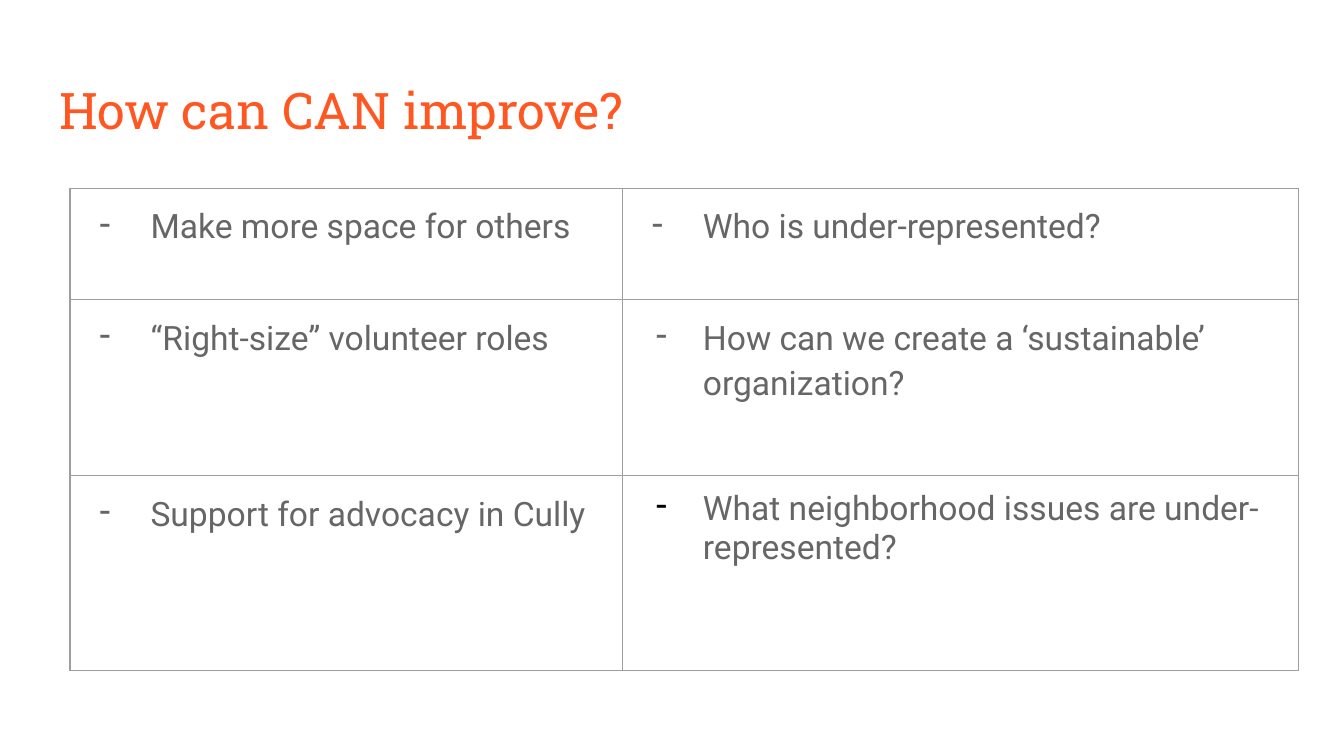
import pptx
import pptx.util
import pptx.dml.color
import pptx.enum.text
import pptx.oxml
import pptx.oxml.ns
from pptx.util import Inches

GRAY = "666666"
NS = pptx.oxml.ns.nsdecls("a")


def rgb(value):
    return pptx.dml.color.RGBColor.from_string(value)


def style(r, font, size, color):
    r.font.name = font
    r.font.size = pptx.util.Pt(size)
    r.font.color.rgb = rgb(color)


prs = pptx.Presentation()
prs.slide_width = Inches(10)
prs.slide_height = Inches(10) * 9 // 16
s = prs.slides.add_slide(prs.slide_layouts[5])

title = s.shapes.title
title.left, title.top = Inches(0.34), Inches(0.49)
title.width, title.height = Inches(9.32), Inches(0.63)
tf = title.text_frame
tf.text = "How can CAN improve?"
tf.margin_left = tf.margin_right = tf.margin_top = tf.margin_bottom = Inches(0.1)
tf.vertical_anchor = pptx.enum.text.MSO_ANCHOR.TOP
tf.auto_size = pptx.enum.text.MSO_AUTO_SIZE.NONE
tf.word_wrap = True
p = tf.paragraphs[0]
p.alignment = pptx.enum.text.PP_ALIGN.LEFT
style(p.runs[0], "Roboto Slab", 27, "FF5722")

col_widths = [4.11, 5.03]
row_heights = [0.83, 1.31, 1.45]
rows = [
    [("Make more space for others", 0.38, 1.15, GRAY),
     ("Who is under-represented?", 0.38, 1.15, GRAY)],
    [("“Right-size” volunteer roles", 0.38, 1.15, GRAY),
     ("How can we create a ‘sustainable’ organization?", 0.35, 1.15, GRAY)],
    [("Support for advocacy in Cully", 0.38, 1.15, GRAY),
     ("What neighborhood issues are under-represented?", 0.35, 1, "000000")],
]

table = s.shapes.add_table(
    len(rows), len(col_widths), Inches(0.52), Inches(1.4),
    Inches(sum(col_widths)), Inches(sum(row_heights))).table
table.first_row = table.horz_banding = False
for col, width in zip(table.columns, col_widths):
    col.width = Inches(width)
for row, height in zip(table.rows, row_heights):
    row.height = Inches(height)

for i, row in enumerate(rows):
    for j, (text, hanging, spacing, bullet_color) in enumerate(row):
        cell = table.cell(i, j)
        cell.text = text
        cell.margin_left = cell.margin_right = Inches(0.1)
        cell.margin_top = cell.margin_bottom = Inches(0.1)
        tcPr = cell._tc.get_or_add_tcPr()
        for side in ("lnL", "lnR", "lnT", "lnB"):
            tcPr.append(pptx.oxml.parse_xml(
                f'<a:{side} {NS} w="{pptx.util.Pt(0.75)}"><a:solidFill>'
                f'<a:srgbClr val="9E9E9E"/></a:solidFill></a:{side}>'))
        cell.fill.background()

        p = cell.text_frame.paragraphs[0]
        p.line_spacing = float(spacing)
        style(p.runs[0], "Roboto", 18, GRAY)
        pPr = p._p.get_or_add_pPr()
        pPr.set("marL", str(Inches(0.5)))
        pPr.set("indent", str(-Inches(hanging)))
        for xml in (f'<a:buClr {NS}><a:srgbClr val="{bullet_color}"/></a:buClr>',
                    f'<a:buChar {NS} char="-"/>'):
            pPr.append(pptx.oxml.parse_xml(xml))

prs.save("out.pptx")
